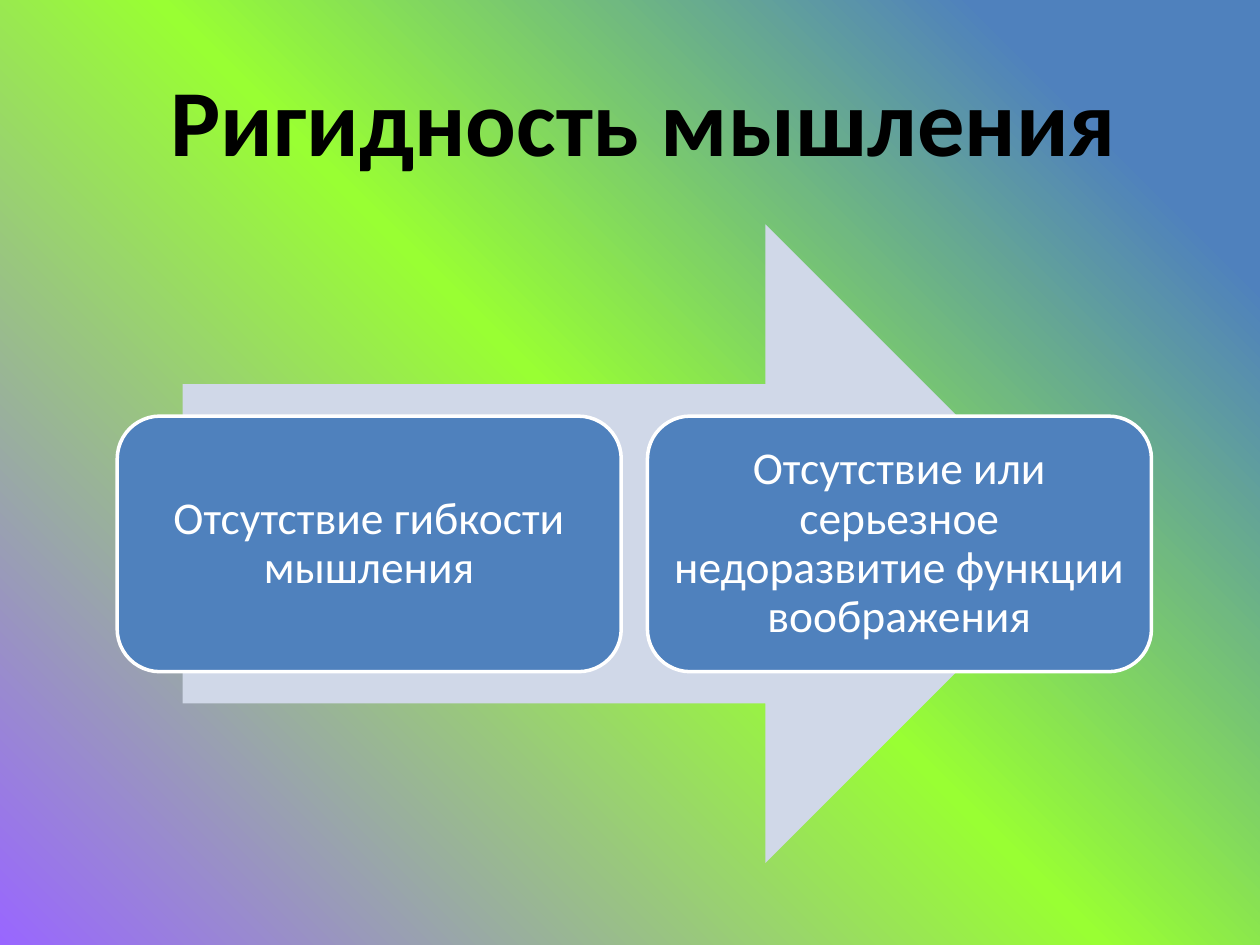
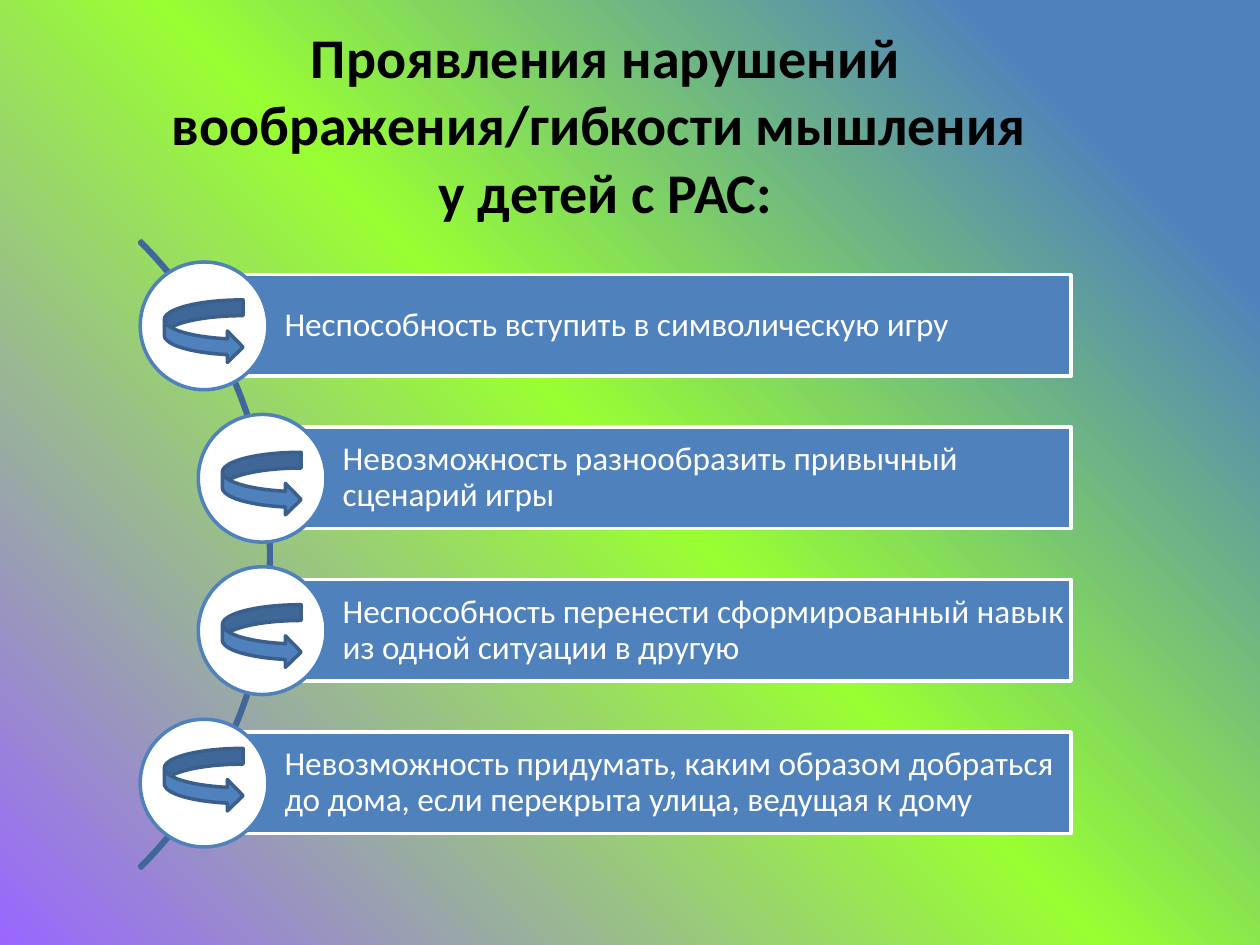
from pptx import Presentation
from pptx.dml.color import RGBColor
from pptx.enum.shapes import MSO_SHAPE as SHAPE
from pptx.enum.text import MSO_ANCHOR as ANCHOR, PP_ALIGN as ALIGN
from pptx.oxml import parse_xml
from pptx.oxml.ns import nsdecls, qn
from pptx.util import Pt

FONT = "Calibri"
BLACK = RGBColor(0x00, 0x00, 0x00)
WHITE = RGBColor(0xFF, 0xFF, 0xFF)
BLUE = RGBColor(0x4F, 0x81, 0xBD)
DARK_BLUE = RGBColor(0x3A, 0x5F, 0x8C)
ARC_BLUE = RGBColor(0x3F, 0x67, 0x97)
PALE_BLUE = RGBColor(0xD0, 0xD8, 0xE8)
GREEN = RGBColor(0x99, 0xFF, 0x33)
PURPLE = RGBColor(0x99, 0x66, 0xFF)
GRADIENT = ((13, BLUE), (50, GREEN), (100, PURPLE))

CAUSES = (
    "Отсутствие гибкости мышления",
    "Отсутствие или серьезное недоразвитие функции воображения",
)
SIGNS = (
    ("Неспособность вступить в символическую игру", 116.6, 14.4),
    ("Невозможность разнообразить привычный сценарий игры", 149.8, 14.4),
    ("Неспособность перенести сформированный навык из одной ситуации в другую", 149.8, 14.4),
    ("Невозможность придумать, каким образом добраться до дома, "
     "если перекрыта улица, ведущая к дому", 116.6, 9.4),
)
BAR_TOP, BAR_RIGHT, BAR_HEIGHT, BAR_PITCH = 157, 612, 58, 87.1
DISC = 73


def set_background(master):
    master.background.fill.gradient()
    grad = master.element.find(".//" + qn("p:bgPr")).find(qn("a:gradFill"))
    stops = "".join(
        f'<a:gs pos="{pos * 1000}"><a:srgbClr val="{color}"/></a:gs>' for pos, color in GRADIENT
    )
    grad.getparent().replace(grad, parse_xml(
        f'<a:gradFill {nsdecls("a")}><a:gsLst>{stops}</a:gsLst>'
        '<a:lin ang="8100000" scaled="0"/></a:gradFill>'
    ))


def write_text(sp, text, size, color, bold=False, align=ALIGN.CENTER,
               anchor=ANCHOR.MIDDLE, insets=(7.2, 3.6, 7.2, 3.6), spacing=None, wrap=True):
    tf = sp.text_frame
    tf.word_wrap = wrap
    tf.vertical_anchor = anchor
    tf.margin_left, tf.margin_top, tf.margin_right, tf.margin_bottom = map(Pt, insets)
    tf.text = text
    for p in tf.paragraphs:
        p.alignment = align
        p.line_spacing = spacing
        font = p.runs[0].font
        font.name, font.size, font.bold = FONT, Pt(size), bold
        font.color.rgb = color


def add_title(slide, text, box, size, wrap=True):
    sp = slide.shapes.add_textbox(*map(Pt, box))
    write_text(sp, text, size, BLACK, bold=True, anchor=ANCHOR.TOP, wrap=wrap)


def add_figure(slide, kind, box, fill=None, line=None):
    sp = slide.shapes.add_shape(kind, *map(Pt, box))
    sp.shadow.inherit = False
    if fill is None:
        sp.fill.background()
    else:
        sp.fill.solid()
        sp.fill.fore_color.rgb = fill
    if line is None:
        sp.line.fill.background()
    else:
        sp.line.color.rgb = line
        sp.line.width = Pt(2)
    return sp


def add_cause(slide, text, left):
    sp = add_figure(slide, SHAPE.ROUNDED_RECTANGLE, (left, 237.8, 288, 146), BLUE, WHITE)
    write_text(sp, text, 26, WHITE, insets=(7.9,) * 4, spacing=0.9)


def add_arc(slide):
    sp = add_figure(slide, SHAPE.BLOCK_ARC, (-352, 63.4, 507, 507), line=ARC_BLUE)
    for i, value in enumerate((189, 27, 0.003)):
        sp.adjustments[i] = value


def add_sign(slide, text, left, top, arrow_drop):
    bar = add_figure(slide, SHAPE.RECTANGLE, (left, top, BAR_RIGHT - left, BAR_HEIGHT), BLUE, WHITE)
    write_text(bar, text, 19, WHITE, align=ALIGN.LEFT, insets=(46, 3.6, 3.6, 3.6), spacing=0.9)
    add_figure(slide, SHAPE.OVAL, (left - DISC / 2, top - 7.3, DISC, DISC), WHITE, BLUE)
    add_figure(slide, SHAPE.CURVED_RIGHT_ARROW, (left - 22.7, top + arrow_drop, 45, 36),
               BLUE, DARK_BLUE)


def build_rigidity(slide):
    add_figure(slide, SHAPE.RIGHT_ARROW, (104.4, 128.2, 515.5, 365), PALE_BLUE)
    for i, text in enumerate(CAUSES):
        add_cause(slide, text, 67 + 303 * i)
    add_title(slide, "Ригидность мышления", (87.8, 31.7, 560, 72.7), 54, wrap=False)


def build_signs(slide):
    add_title(slide, "Проявления нарушений воображения/гибкости мышления \nу детей с РАС:",
              (59.8, 9.4, 572.4, 162.7), 32)
    add_arc(slide)
    for i, (text, left, arrow_drop) in enumerate(SIGNS):
        add_sign(slide, text, left, BAR_TOP + BAR_PITCH * i, arrow_drop)


def main():
    prs = Presentation()
    prs.slide_width, prs.slide_height = Pt(720), Pt(540)
    set_background(prs.slide_master)
    for build in (build_rigidity, build_signs):
        build(prs.slides.add_slide(prs.slide_layouts[6]))
    prs.save("out.pptx")


if __name__ == "__main__":
    main()
